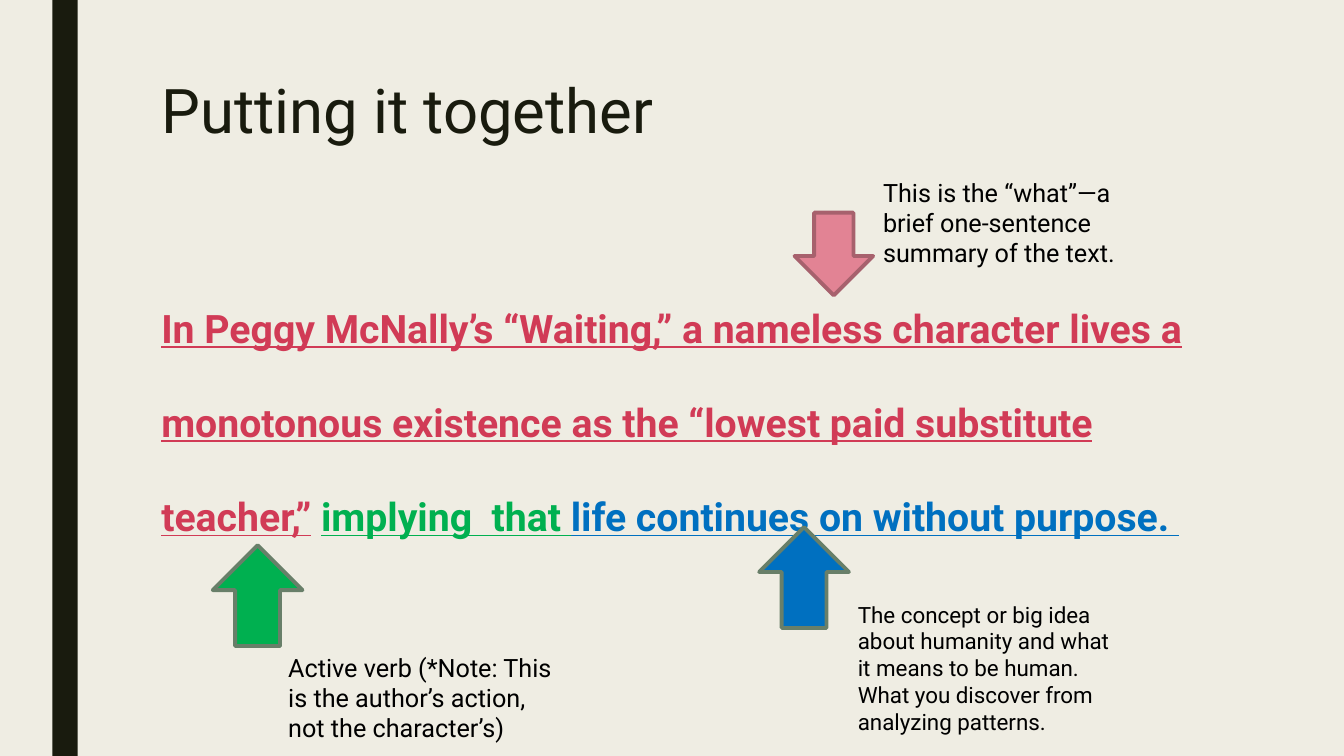
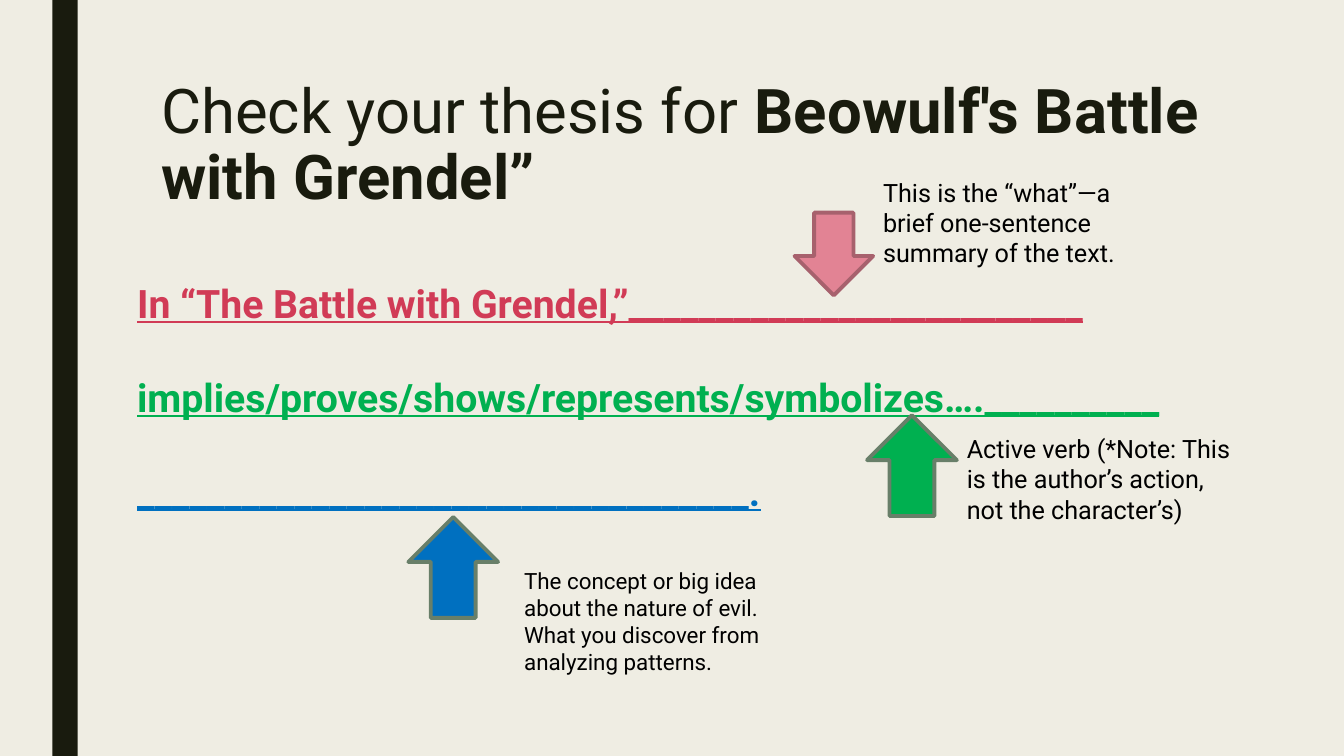
from lxml.etree import SubElement
from pptx import Presentation
from pptx.dml.color import RGBColor
from pptx.enum.shapes import MSO_SHAPE
from pptx.enum.text import MSO_ANCHOR, MSO_AUTO_SIZE, PP_ALIGN
from pptx.oxml.ns import qn
from pptx.util import Inches, Pt

FONT = "Roboto"
PAPER, INK, BLACK = "EFEDE3", "191B0E", "000000"
ROSE, GREEN, BLUE = "D13B56", "00B050", "0070C0"
BAND = (0.52, 0, 0.25, 7.5)
TITLE_BOX = (1.5, 0.75, 10.5, 1.62)
TITLE_FORMAT = {"line_spacing": 0.89, "alignment": PP_ALIGN.LEFT}
THESIS_FORMAT = {"line_spacing": 2.0, "space_before": Pt(10),
                 "space_after": Pt(2), "alignment": PP_ALIGN.LEFT}

# Arrow kinds: preset, width, height, fill, line
ARROWS = {
    "what": (MSO_SHAPE.DOWN_ARROW, 0.78, 0.82, "E28394", "A7616D"),
    "verb": (MSO_SHAPE.UP_ARROW, 0.89, 1, GREEN, "687F69"),
    "idea": (MSO_SHAPE.UP_ARROW, 0.89, 1, BLUE, "687F69"),
}
NOTE_WIDTH = 2.82
WHAT_NOTE = "This is the “what”—a brief one-sentence summary of the text."
VERB_NOTE = "Active verb (*Note: This is the author’s action, not the character’s)"

# Thesis parts: text, colour, underlined
# Notes: arrow kind, arrow corner, note corner, note height, size, text
SLIDES = [
    {
        "title": [("Putting it together", False)],
        "thesis_box": (1.5, 2.5, 10.5, 3.92),
        "thesis": [
            ("In Peggy McNally’s “Waiting,” a nameless character lives a "
             "monotonous existence as the “lowest paid substitute teacher,”", ROSE, True),
            (" ", ROSE, False),
            ("implying  that ", GREEN, True),
            ("life continues on without purpose. ", BLUE, True),
        ],
        "notes": [
            ("what", (7.88, 2.11), (8.66, 1.71), 1.01, 18, WHAT_NOTE),
            ("verb", (2.11, 5.41), (2.76, 6.42), 1.01, 18, VERB_NOTE),
            ("idea", (7.53, 5.23), (8.41, 5.91), 1.45, 16,
             "The concept or big idea about humanity and what it means to be "
             "human. What you discover from analyzing patterns."),
        ],
    },
    {
        "title": [("Check your thesis for ", False),
                  ("Beowulf's Battle with Grendel”", True)],
        "thesis_box": (1.26, 2.25, 12.24, 4.78),
        "thesis": [
            ("In “The Battle with Grendel,”" + "_" * 26 + " ", ROSE, True),
            ("implies/proves/shows/represents/symbolizes…." + "_" * 10 + " ", GREEN, True),
            ("_" * 35 + ".", BLUE, True),
        ],
        "notes": [
            ("what", (7.88, 2.11), (8.66, 1.71), 1.01, 18, WHAT_NOTE),
            ("verb", (8.6, 4.12), (9.49, 4.25), 1.01, 18, VERB_NOTE),
            ("idea", (4.05, 5.13), (5.1, 5.58), 1.18, 16,
             "The concept or big idea about the nature of evil. "
             "What you discover from analyzing patterns."),
        ],
    },
]


def rgb(colour):
    return RGBColor.from_string(colour)


def inches(box):
    return [Inches(length) for length in box]


def place(shape, box):
    shape.left, shape.top, shape.width, shape.height = inches(box)


def set_all(target, values):
    for name, value in values.items():
        setattr(target, name, value)


def add_span(para, text, size, colour, **style):
    span = para.add_run()
    span.text = text
    set_all(span.font, {"name": FONT, "size": Pt(size), **style})
    span.font.color.rgb = rgb(colour)


def prepare_frame(shape, auto_size=MSO_AUTO_SIZE.NONE):
    """Wrap the text from the top and return the first paragraph."""
    set_all(shape.text_frame, {"word_wrap": True, "auto_size": auto_size,
                               "vertical_anchor": MSO_ANCHOR.TOP})
    return shape.text_frame.paragraphs[0]


def add_filled(page, preset, box, fill, line=None):
    shape = page.shapes.add_shape(preset, *inches(box))
    shape.shadow.inherit = False
    shape.fill.solid()
    shape.fill.fore_color.rgb = rgb(fill)
    if line:
        shape.line.color.rgb = rgb(line)
        shape.line.width = Pt(2.75)
    else:
        shape.line.fill.background()
    return shape


def style_master(deck, page):
    """Give the master its background and side band, drawn by way of a page."""
    master = deck.slide_master
    master.background.fill.solid()
    master.background.fill.fore_color.rgb = rgb(PAPER)
    band = add_filled(page, MSO_SHAPE.RECTANGLE, BAND, INK)
    master.shapes.element.insert(2, band.element)


def fill_title(page, spans):
    title = page.shapes.title
    place(title, TITLE_BOX)
    para = prepare_frame(title)
    set_all(para, TITLE_FORMAT)
    for text, bold in spans:
        add_span(para, text, 44, INK, bold=bold)


def fill_thesis(page, box, spans):
    body = page.placeholders[1]
    place(body, box)
    para = prepare_frame(body)
    set_all(para, THESIS_FORMAT)
    properties = para._p.get_or_add_pPr()
    properties.set("marL", "0")
    properties.set("indent", "0")
    SubElement(properties, qn("a:buNone"))
    for text, colour, underline in spans:
        add_span(para, text, 28, colour, bold=True, underline=underline)


def add_note(page, kind, arrow_corner, note_corner, height, size, text):
    preset, arrow_width, arrow_height, fill, line = ARROWS[kind]
    add_filled(page, preset, (*arrow_corner, arrow_width, arrow_height), fill, line)
    box = page.shapes.add_textbox(*inches((*note_corner, NOTE_WIDTH, height)))
    para = prepare_frame(box, MSO_AUTO_SIZE.SHAPE_TO_FIT_TEXT)
    add_span(para, text, size, BLACK)


def main():
    deck = Presentation()
    deck.slide_width, deck.slide_height = Inches(13.33), Inches(7.5)
    for number, content in enumerate(SLIDES):
        page = deck.slides.add_slide(deck.slide_layouts[1])
        if number == 0:
            style_master(deck, page)
        fill_title(page, content["title"])
        fill_thesis(page, content["thesis_box"], content["thesis"])
        for note in content["notes"]:
            add_note(page, *note)
    deck.save("out.pptx")


if __name__ == "__main__":
    main()
